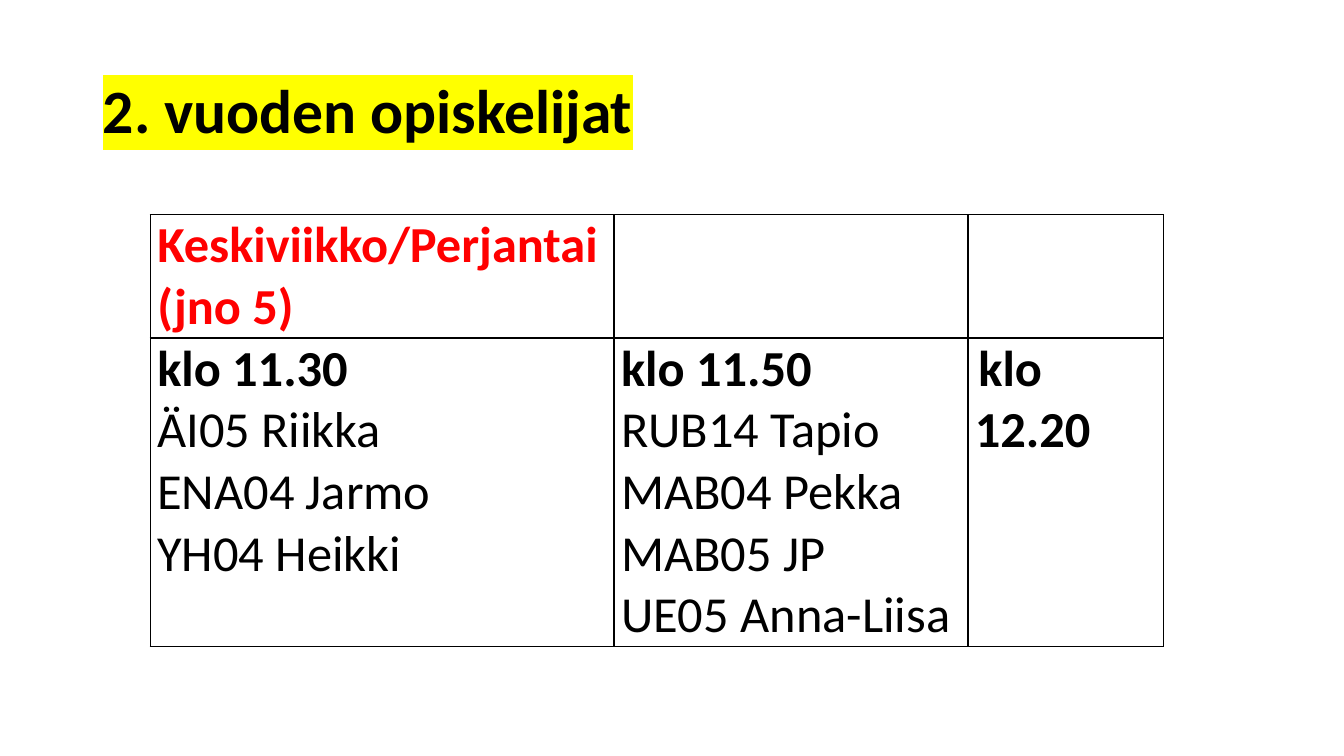
import pptx
import pptx.dml.color
import pptx.enum.text
import pptx.oxml
import pptx.oxml.ns
import pptx.util

PAGE_WIDTH, PAGE_HEIGHT = 13.33, 7.5
FONT = "Calibri"
BLACK, RED, YELLOW = "000000", "FF0000", "FFFF00"
COLUMNS = (4.6, 3.51, 1.94)
ROWS = (1.13, 2.97)

# Each cell is a list of lines, each line a list of (text, size, bold, colour)
HEADING = [[("Keskiviikko/Perjantai (jno 5)", 36, True, RED)]]


def group(time, *courses):
    return [[(time, 36, True, BLACK)]] + [[(course, 36, False, BLACK)] for course in courses]


SCHEDULE = (
    (HEADING, [], []),
    (
        group("klo 11.30", "ÄI05 Riikka", "ENA04 Jarmo", "YH04 Heikki"),
        group("klo 11.50", "RUB14 Tapio", "MAB04 Pekka", "MAB05 JP", "UE05 Anna-Liisa"),
        [[(" ", 11, False, BLACK), ("klo 12.20", 36, True, BLACK)]],
    ),
)


def colour(value):
    return pptx.dml.color.RGBColor.from_string(value)


def add_span(para, text, size, bold, value):
    span = para.add_run()
    span.text = text
    span.font.name = FONT
    span.font.size = pptx.util.Pt(size)
    span.font.bold = bold
    span.font.color.rgb = colour(value)
    return span


def highlight(span, value):
    mark = pptx.oxml.parse_xml(
        f'<a:highlight {pptx.oxml.ns.nsdecls("a")}><a:srgbClr val="{value}"/></a:highlight>'
    )
    fill = span.font.fill._xPr.find(pptx.oxml.ns.qn("a:solidFill"))
    fill.addnext(mark)


def add_title(page, text):
    box = page.shapes.title
    box.left, box.top = pptx.util.Inches(0.92), pptx.util.Inches(0.4)
    box.width, box.height = pptx.util.Inches(11.5), pptx.util.Inches(1.45)
    box.text_frame.vertical_anchor = pptx.enum.text.MSO_ANCHOR.MIDDLE
    para = box.text_frame.paragraphs[0]
    para.alignment = pptx.enum.text.PP_ALIGN.LEFT
    para.line_spacing = 0.9
    highlight(add_span(para, text, 44, True, BLACK), YELLOW)


def add_borders(cell, value):
    properties = cell._tc.get_or_add_tcPr()
    for side in ("lnL", "lnR", "lnT", "lnB"):
        properties.append(pptx.oxml.parse_xml(
            f'<a:{side} {pptx.oxml.ns.nsdecls("a")} w="{pptx.util.Pt(1)}">'
            f'<a:solidFill><a:srgbClr val="{value}"/></a:solidFill></a:{side}>'
        ))


def fill_cell(cell, lines):
    add_borders(cell, BLACK)
    cell.fill.background()
    cell.margin_left = cell.margin_right = pptx.util.Inches(0.07)
    cell.margin_top = cell.margin_bottom = 0
    for index, line in enumerate(lines):
        frame = cell.text_frame
        para = frame.add_paragraph() if index else frame.paragraphs[0]
        for part in line:
            add_span(para, *part)


def add_schedule(page):
    table = page.shapes.add_table(
        len(ROWS), len(COLUMNS), pptx.util.Inches(1.49), pptx.util.Inches(2.13),
        pptx.util.Inches(sum(COLUMNS)), pptx.util.Inches(sum(ROWS)),
    ).table
    table.first_row = table.horz_banding = False
    for column, width in zip(table.columns, COLUMNS):
        column.width = pptx.util.Inches(width)
    for row, height, contents in zip(table.rows, ROWS, SCHEDULE):
        row.height = pptx.util.Inches(height)
        for cell, lines in zip(row.cells, contents):
            fill_cell(cell, lines)


def main():
    deck = pptx.Presentation()
    deck.slide_width = pptx.util.Inches(PAGE_WIDTH)
    deck.slide_height = pptx.util.Inches(PAGE_HEIGHT)
    page = deck.slides.add_slide(deck.slide_layouts[5])  # title only
    add_title(page, "2. vuoden opiskelijat")
    add_schedule(page)
    deck.save("out.pptx")


if __name__ == "__main__":
    main()
